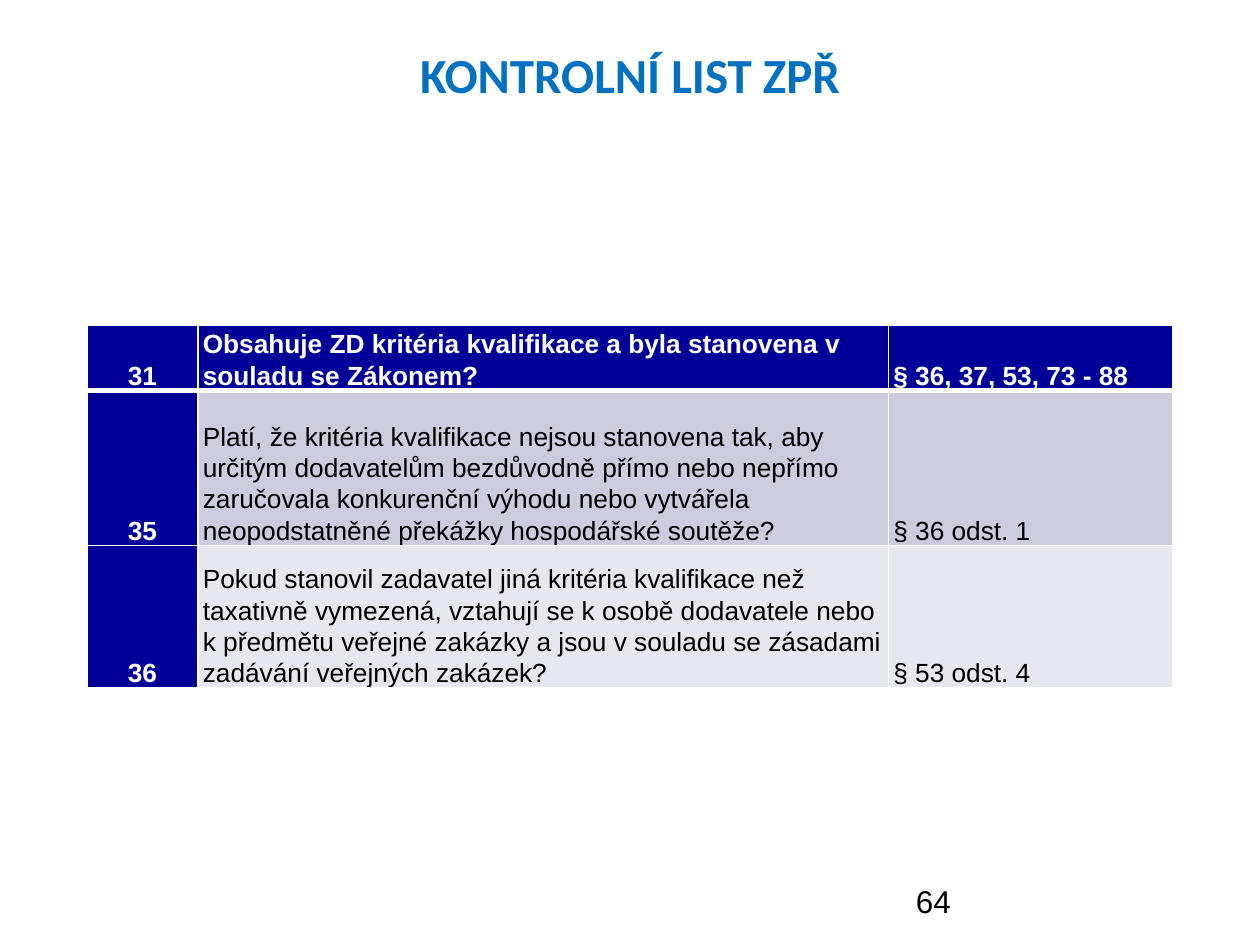
"""Build the qualification checklist slide with its table."""
import pptx
import pptx.util
import pptx.oxml
import pptx.oxml.ns
import pptx.dml.color
import pptx.enum.text

Inches, Pt = pptx.util.Inches, pptx.util.Pt
ALIGN, ANCHOR = pptx.enum.text.PP_ALIGN, pptx.enum.text.MSO_ANCHOR

TITLE = "KONTROLNÍ LIST ZPŘ"
PAGE = "64"
ROWS = [
    ("31", "Obsahuje ZD kritéria kvalifikace a byla stanovena v souladu se Zákonem?",
     "§ 36, 37, 53, 73 - 88"),
    ("35", "Platí, že kritéria kvalifikace nejsou stanovena tak, aby určitým dodavatelům "
     "bezdůvodně přímo nebo nepřímo zaručovala konkurenční výhodu nebo vytvářela "
     "neopodstatněné překážky hospodářské soutěže?", "§ 36 odst. 1"),
    ("36", "Pokud stanovil zadavatel jiná kritéria kvalifikace než taxativně vymezená, "
     "vztahují se k osobě dodavatele nebo k předmětu veřejné zakázky a jsou v souladu "
     "se zásadami zadávání veřejných zakázek?", "§ 53 odst. 4"),
]
WIDTHS = [0.88, 5.48, 2.26]
HEIGHTS = [0.52, 1.23, 1.13]
THEME = {
    "head": "000099", "bands": ["E7E7EF", "CCCCDE"], "line": "FFFFFF",
    "title": {"name": "Calibri", "size": Pt(28), "bold": True, "color": "0070C0"},
    "label": {"name": "Arial", "size": Pt(15), "bold": True, "color": "FFFFFF"},
    "body": {"name": "Arial", "size": Pt(15), "bold": False, "color": "000000"},
    "page": {"name": "Arial", "size": Pt(18), "bold": False, "color": "000000"},
}
CELL = {"margin_left": Inches(0.04), "margin_right": Inches(0.04),
        "margin_top": 0, "margin_bottom": 0, "vertical_anchor": ANCHOR.BOTTOM}
FRAME = {"word_wrap": True, "vertical_anchor": ANCHOR.TOP}


def apply(thing, values):
    for key, value in values.items():
        setattr(thing, key, value)


def write(frame, text, style, align=ALIGN.LEFT, space=1.0):
    para = frame.paragraphs[0]
    apply(para, {"alignment": align, "line_spacing": space})
    run = para.add_run()
    run.text = text
    apply(run.font, {key: val for key, val in style.items() if key != "color"})
    run.font.color.rgb = pptx.dml.color.RGBColor.from_string(style["color"])


def edge(cell, side, width):
    cell._tc.get_or_add_tcPr().append(pptx.oxml.parse_xml(
        f'<a:ln{side} {pptx.oxml.ns.nsdecls("a")} w="{Pt(width)}"><a:solidFill>'
        f'<a:srgbClr val="{THEME["line"]}"/></a:solidFill></a:ln{side}>'))


def fill_cell(cell, text, row, col):
    dark = row == 0 or col == 0
    apply(cell, CELL)
    widths = {"L": 1, "R": 1, "T": 3 if row == 1 else 1, "B": 3 if row == 0 else 1}
    for side, width in widths.items():
        edge(cell, side, width)
    cell.fill.solid()
    cell.fill.fore_color.rgb = pptx.dml.color.RGBColor.from_string(
        THEME["head"] if dark else THEME["bands"][row % 2])
    write(cell.text_frame, text, THEME["label" if dark else "body"],
          ALIGN.LEFT if col else ALIGN.CENTER, 1.07)


def main():
    deck = pptx.Presentation()
    apply(deck, {"slide_width": Inches(10), "slide_height": Inches(7.5)})
    slide = deck.slides.add_slide(deck.slide_layouts[5])

    title = slide.shapes.title
    apply(title, {"left": Inches(0.5), "top": Inches(0.3),
                  "width": Inches(9), "height": Inches(1.25)})
    apply(title.text_frame, FRAME)
    write(title.text_frame, TITLE, THEME["title"], ALIGN.CENTER)

    table = slide.shapes.add_table(
        len(ROWS), len(WIDTHS), Inches(0.69), Inches(2.58),
        Inches(sum(WIDTHS)), Inches(sum(HEIGHTS))).table
    for col, width in zip(table.columns, WIDTHS):
        col.width = Inches(width)
    for row, height in zip(table.rows, HEIGHTS):
        row.height = Inches(height)
    for row, texts in enumerate(ROWS):
        for col, text in enumerate(texts):
            fill_cell(table.cell(row, col), text, row, col)

    page = slide.shapes.add_textbox(Inches(7.17), Inches(6.95), Inches(2.33), Inches(0.4))
    apply(page.text_frame, FRAME)
    write(page.text_frame, PAGE, THEME["page"])
    deck.save("out.pptx")


if __name__ == "__main__":
    main()
